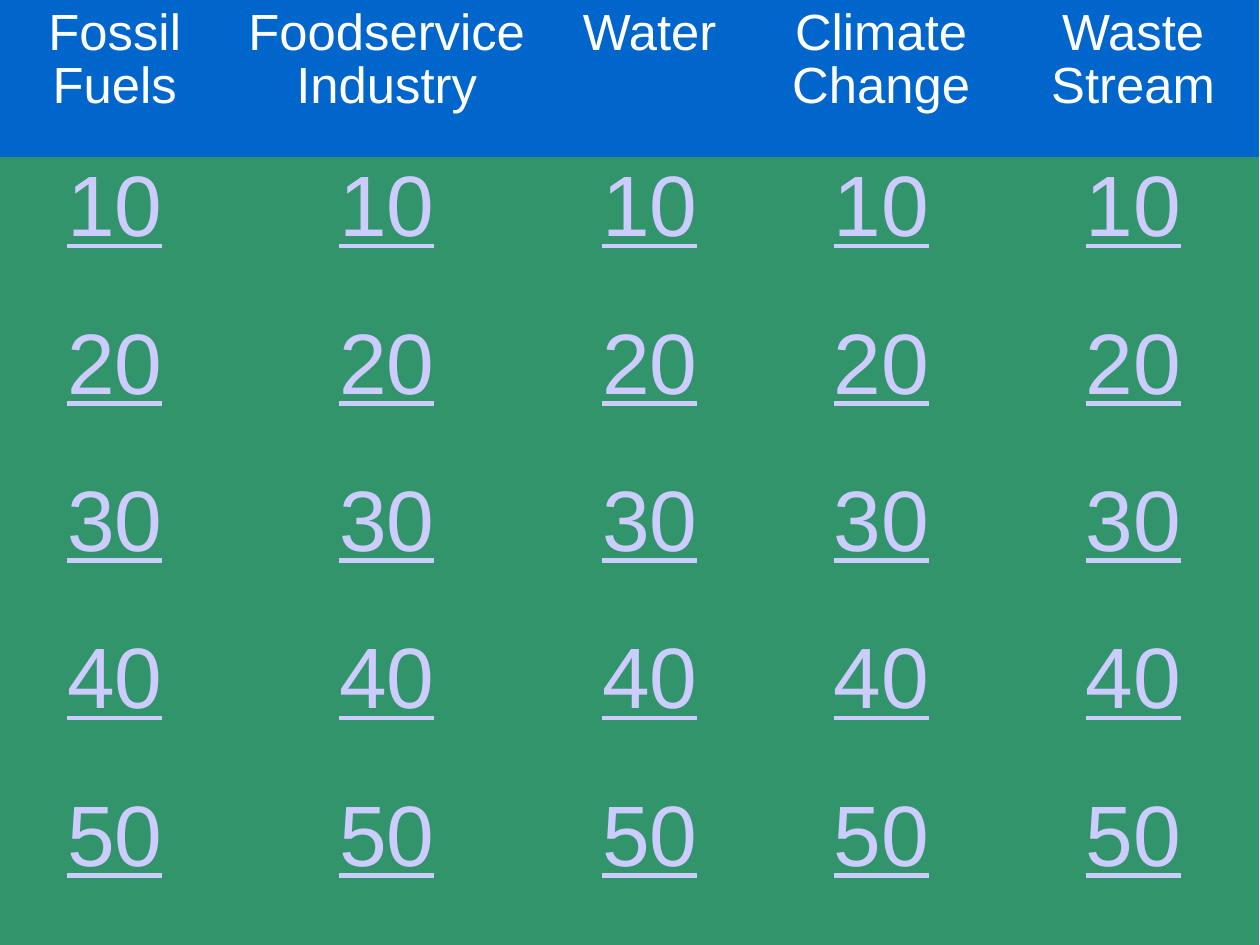
from dataclasses import dataclass

from lxml.etree import SubElement
from pptx import Presentation
from pptx.dml.color import RGBColor
from pptx.enum.text import PP_ALIGN as Align
from pptx.oxml.ns import qn
from pptx.util import Inches, Pt


@dataclass(frozen=True)
class Theme:
    font: str = "Arial"
    header_fill: str = "0066CC"
    header_text: str = "FFFFFF"
    header_size: int = 32
    points_fill: str = "32946A"
    points_text: str = "CCCCFF"
    points_size: int = 54
    border: str = "FFFFFF"
    border_width: float = 0.03
    line_spacing: float = 0.93


POINTS_PER_INCH = 72
SLIDE_WIDTH = Inches(793.75 / POINTS_PER_INCH)
SLIDE_HEIGHT = Inches(595.25 / POINTS_PER_INCH)
CATEGORY_WIDTHS = {
    "Fossil Fuels": 2.01,
    "Foodservice Industry": 2.75,
    "Water": 1.85,
    "Climate Change": 2.2,
    "Waste Stream": 2.21,
}
SCORES = range(10, 60, 10)


def write_text(frame, text, *, font, size, color, spacing, underline=None):
    paragraph = frame.paragraphs[0]
    paragraph.alignment = Align.CENTER
    paragraph.line_spacing = spacing
    run = paragraph.add_run()
    run.text = text
    run.font.name = font
    run.font.size = Pt(size)
    run.font.underline = underline
    run.font.color.rgb = RGBColor.from_string(color)


class QuizSlide:
    def __init__(self, slide, theme):
        self.slide = slide
        self.theme = theme

    def add_board(self, category_widths, scores):
        rows = [list(category_widths)]
        rows += [[str(score)] * len(category_widths) for score in scores]
        board = self.slide.shapes.add_table(
            len(rows), len(category_widths), 0, 0, SLIDE_WIDTH, SLIDE_HEIGHT
        ).table
        board.first_row = board.horz_banding = False
        for column, width in zip(board.columns, category_widths.values()):
            column.width = Inches(width)
        for row_index, labels in enumerate(rows):
            for column_index, label in enumerate(labels):
                cell = board.cell(row_index, column_index)
                self.format_cell(cell, label, is_header=row_index == 0)

    def format_cell(self, cell, label, is_header):
        theme = self.theme
        cell.margin_left = cell.margin_right = Inches(0.1)
        cell.margin_top, cell.margin_bottom = Inches(0.07), Inches(0.05)
        self.add_borders(cell)
        cell.fill.solid()
        fill = theme.header_fill if is_header else theme.points_fill
        cell.fill.fore_color.rgb = RGBColor.from_string(fill)
        write_text(
            cell.text_frame, label, font=theme.font, spacing=theme.line_spacing,
            size=theme.header_size if is_header else theme.points_size,
            color=theme.header_text if is_header else theme.points_text,
            underline=None if is_header else True,
        )

    def add_borders(self, cell):
        """Must run before the cell is filled: borders precede the fill in XML."""
        properties = cell._tc.get_or_add_tcPr()
        for side in ("a:lnL", "a:lnR", "a:lnT", "a:lnB"):
            line = SubElement(properties, qn(side), w=str(Pt(self.theme.border_width)))
            line_fill = SubElement(line, qn("a:solidFill"))
            SubElement(line_fill, qn("a:srgbClr"), val=self.theme.border)


def main():
    presentation = Presentation()
    presentation.slide_width = SLIDE_WIDTH
    presentation.slide_height = SLIDE_HEIGHT
    blank_layout = presentation.slide_layouts[6]
    quiz = QuizSlide(presentation.slides.add_slide(blank_layout), Theme())
    quiz.add_board(CATEGORY_WIDTHS, SCORES)
    presentation.save("out.pptx")


if __name__ == "__main__":
    main()
